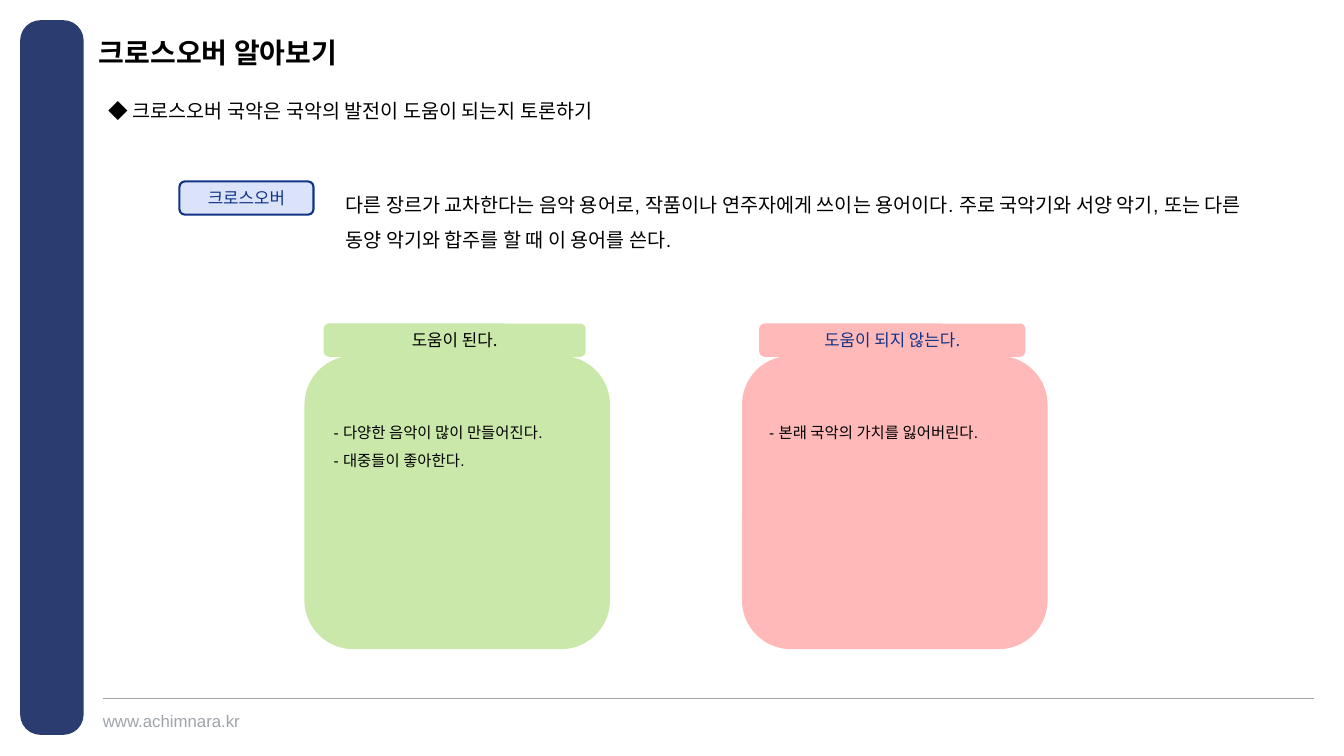
import lxml.etree
import pptx
import pptx.dml.color
import pptx.enum.shapes
import pptx.enum.text
import pptx.oxml.ns
import pptx.util
from pptx.util import Inches

TITLE = "크로스오버 알아보기"
TOPIC = "◆ 크로스오버 국악은 국악의 발전이 도움이 되는지 토론하기"
TERM = "크로스오버"
MEANING = ("다른 장르가 교차한다는 음악 용어로, 작품이나 연주자에게 쓰이는 용어이다. "
           "주로 국악기와 서양 악기, 또는 다른 동양 악기와 합주를 할 때 이 용어를 쓴다.")
SITE = "www.achimnara.kr"
JARS = [
    {"left": 3.02, "lid": (3.21, 2.6), "fill": "green", "color": "black", "label": "도움이 된다.",
     "points": ["- 다양한 음악이 많이 만들어진다.", "- 대중들이 좋아한다."]},
    {"left": 7.36, "lid": (7.53, 2.64), "fill": "pink", "color": "blue", "label": "도움이 되지 않는다.",
     "points": ["- 본래 국악의 가치를 잃어버린다."]},
]
THEME = {
    "navy": "2B3C71", "blue": "113386", "pale": "DAE3FA", "gray": "9EA4AA",
    "black": "000000", "green": "CAE8A9", "pink": "FFB9B9",
    "latin": "Arial", "korean": "Noto Sans CJK KR",
    "title": 20, "body": 14, "label": 12, "point": 11,
}


def rgb(name):
    return pptx.dml.color.RGBColor.from_string(THEME[name])


def write(tf, lines, size, color="black", font="latin", spacing=None, align=None, bold=None):
    tf.word_wrap = True
    for i, line in enumerate(lines):
        p = tf.add_paragraph() if i else tf.paragraphs[0]
        p.text = line
        p.line_spacing = spacing
        p.alignment = align
        p.font.size = pptx.util.Pt(THEME[size])
        p.font.bold = bold
        p.font.color.rgb = rgb(color)
        p.font.name = THEME[font]
        props = p._p.find(".//" + pptx.oxml.ns.qn("a:defRPr"))
        ea = lxml.etree.SubElement(props, pptx.oxml.ns.qn("a:ea"))
        ea.set("typeface", THEME["korean"])


def add_text(slide, box, lines, size, inset=True, **style):
    tf = slide.shapes.add_textbox(*map(Inches, box)).text_frame
    write(tf, lines, size, **style)
    if inset:
        tf.auto_size = pptx.enum.text.MSO_AUTO_SIZE.SHAPE_TO_FIT_TEXT
    else:
        tf.margin_left = tf.margin_top = tf.margin_right = tf.margin_bottom = 0


def add_round(slide, box, fill, line=None, corner=None):
    sp = slide.shapes.add_shape(pptx.enum.shapes.MSO_SHAPE.ROUNDED_RECTANGLE, *map(Inches, box))
    sp.shadow.inherit = False
    sp.fill.solid()
    sp.fill.fore_color.rgb = rgb(fill)
    if line:
        sp.line.color.rgb = rgb(line)
        sp.line.width = pptx.util.Pt(1.5)
    else:
        sp.line.fill.background()
    if corner:
        sp.adjustments[0] = corner
    return sp


def add_label(slide, box, text, fill, color, line=None):
    tf = add_round(slide, box, fill, line).text_frame
    tf.vertical_anchor = pptx.enum.text.MSO_ANCHOR.MIDDLE
    write(tf, [text], "label", color=color, font="korean",
          align=pptx.enum.text.PP_ALIGN.CENTER)


def add_rule(slide, left, right, y):
    line = slide.shapes.add_connector(pptx.enum.shapes.MSO_CONNECTOR.STRAIGHT,
                                      *map(Inches, (left, y, right, y)))
    line.line.color.rgb = rgb("gray")
    line.line.width = pptx.util.Pt(0.5)
    lxml.etree.SubElement(line._element.spPr, pptx.oxml.ns.qn("a:effectLst"))


def add_jar(slide, jar):
    lid_left, lid_width = jar["lid"]
    add_round(slide, (jar["left"], 3.53, 3.03, 2.91), jar["fill"])
    add_label(slide, (lid_left, 3.21, lid_width, 0.33), jar["label"], jar["fill"], jar["color"])
    height = 0.06 + 0.28 * len(jar["points"])
    add_text(slide, (lid_left, 4.06, 2.62, height), jar["points"], "point", spacing=1.5)


def main():
    prs = pptx.Presentation()
    prs.slide_width, prs.slide_height = Inches(13.33), Inches(7.5)
    slide = prs.slides.add_slide(prs.slide_layouts[6])

    add_round(slide, (0.2, 0.2, 0.63, 7.09), "navy", corner=0.32)
    add_rule(slide, 1.02, 13.03, 6.93)
    add_text(slide, (1.02, 7.05, 1.5, 0.2), [SITE], "label", inset=False, color="gray")
    add_text(slide, (0.98, 0.39, 7.87, 0.28), [TITLE], "title", inset=False,
             spacing=0.9, bold=True)
    add_text(slide, (0.98, 0.82, 9.45, 0.41), [TOPIC], "body", spacing=1.5)
    add_label(slide, (1.78, 1.8, 1.33, 0.33), TERM, "pale", "blue", line="blue")
    add_text(slide, (3.33, 1.75, 9.1, 0.76), [MEANING], "body", spacing=1.5)
    for jar in JARS:
        add_jar(slide, jar)

    prs.save("out.pptx")


if __name__ == "__main__":
    main()
